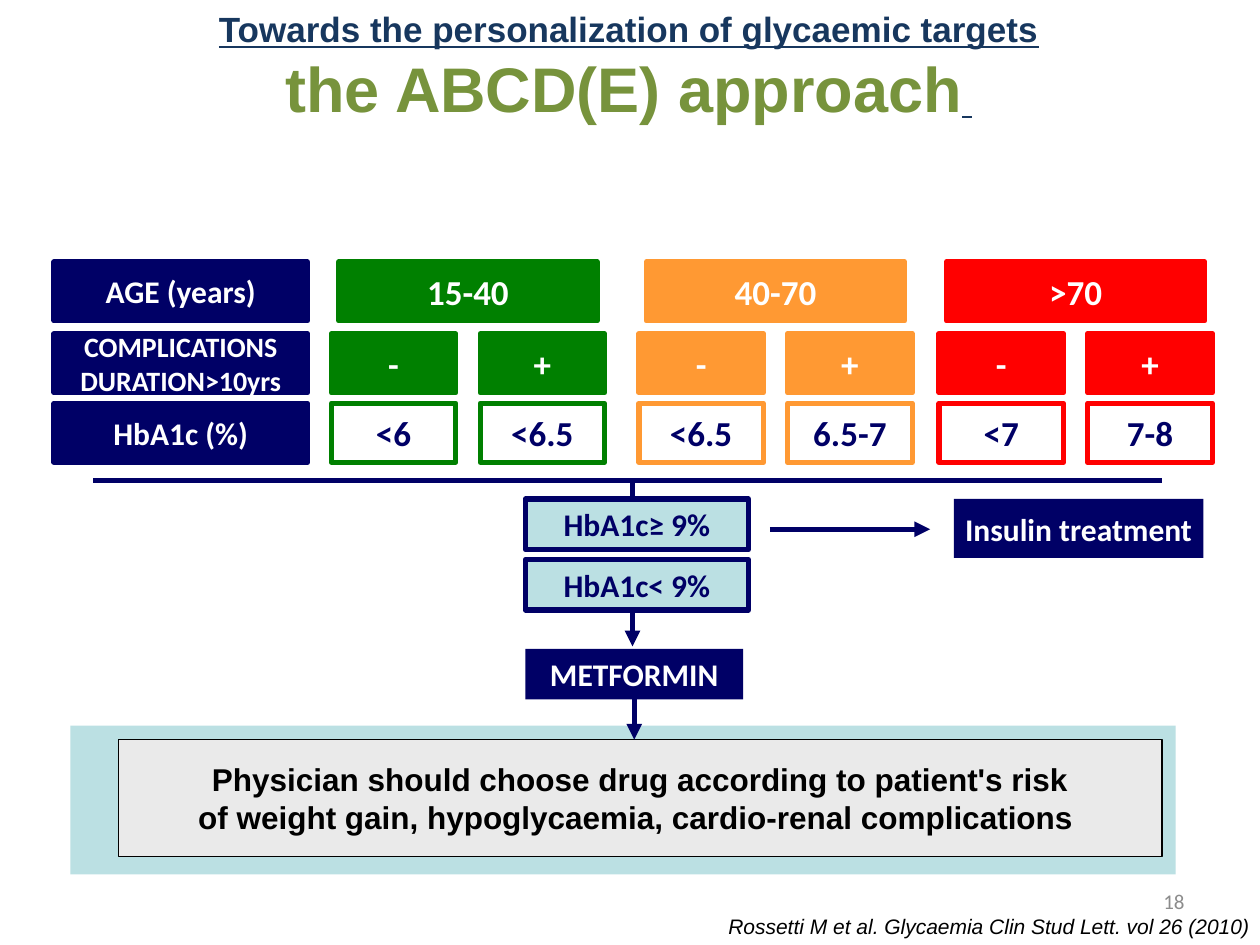
from lxml import etree
from pptx import Presentation
from pptx import util as u
from pptx.dml import color
from pptx.enum import shapes, text
from pptx.oxml import ns

NAVY, PALE, WHITE, BLACK = "000066", "BBE0E3", "FFFFFF", "000000"
CENTER, RIGHT = text.PP_ALIGN.CENTER, text.PP_ALIGN.RIGHT
TOP, MIDDLE = text.MSO_ANCHOR.TOP, text.MSO_ANCHOR.MIDDLE
ROW_TOPS, ROW_HEIGHT = (0, 1.45, 2.85), 1.19
AGE_GROUPS = [
    (5.74, "008000", "15-40", (("-", "<6"), ("+", "<6.5"))),
    (11.94, "FF9933", "40-70", (("-", "<6.5"), ("+", "6.5-7"))),
    (17.99, "FF0000", ">70", (("-", "<7"), ("+", "7-8"))),
]


def rgb(value):
    """Turn a hex string into a colour."""
    return color.RGBColor.from_string(value)


def style_run(run, ink, **font):
    """Apply font values and a colour to a run."""
    for key, value in font.items():
        setattr(run.font, key, value)
    run.font.color.rgb = rgb(ink)


def write(frame, lines, ink, size, align=CENTER, anchor=MIDDLE, wrap=False, **font):
    """Write equally formatted lines into a text frame."""
    frame.word_wrap, frame.vertical_anchor = wrap, anchor
    for index, line in enumerate(lines):
        paragraph = frame.paragraphs[0] if index == 0 else frame.add_paragraph()
        paragraph.alignment = align
        run = paragraph.add_run()
        run.text = line
        style_run(run, ink, size=u.Pt(size), **font)


def add_box(slide, box, fill, edge=None, width=3, lines=(), ink=WHITE, size=18,
            name="Calibri", **layout):
    """Add a filled rectangle with bold text."""
    rect = slide.shapes.add_shape(shapes.MSO_SHAPE.RECTANGLE, *map(u.Cm, box))
    rect.shadow.inherit = False
    rect.fill.solid()
    rect.fill.fore_color.rgb = rgb(fill)
    if edge:
        rect.line.color.rgb = rgb(edge)
        rect.line.width = u.Pt(width)
    else:
        rect.line.fill.background()
    write(rect.text_frame, lines, ink, size, name=name, bold=True, **layout)
    return rect


def add_line(slide, start, end, arrow=False):
    """Add a navy straight connector, with an optional arrowhead."""
    line = slide.shapes.add_connector(
        shapes.MSO_CONNECTOR.STRAIGHT, *map(u.Cm, (*start, *end)))
    line.line.color.rgb = rgb(NAVY)
    line.line.width = u.Pt(3)
    if arrow:
        etree.SubElement(line.line._get_or_add_ln(), ns.qn("a:tailEnd"), type="triangle")
    etree.SubElement(line._element.spPr, ns.qn("a:effectLst"))
    return line


def add_title(slide, box):
    """Format the title placeholder with its two lines."""
    title = slide.shapes.title
    title.left, title.top, title.width, title.height = map(u.Cm, box)
    frame = title.text_frame
    frame.auto_size = text.MSO_AUTO_SIZE.NONE
    common = {"name": "Arial", "bold": True}
    write(frame, ["Towards the personalization of glycaemic targets",
                  "the ABCD(E) approach"], "17375E", 20, anchor=TOP,
          underline=True, **common)
    approach = frame.paragraphs[1]
    style_run(approach.runs[0], "77933C", size=u.Pt(36), underline=False)
    tail = approach.add_run()
    tail.text = " "
    style_run(tail, "17375E", size=u.Pt(20), underline=True, **common)


def add_targets(slide, left, top):
    """Draw the grid of HbA1c targets by age and complications."""
    labels = ((["AGE (years)"], 18),
              (["COMPLICATIONS", "DURATION>10yrs"], 16),
              (["HbA1c (%)"], 18))
    age_y, risk_y, target_y = (top + offset for offset in ROW_TOPS)
    for y, (lines, size) in zip((age_y, risk_y, target_y), labels):
        add_box(slide, (left, y, 5.11, ROW_HEIGHT), NAVY, NAVY, lines=lines, size=size)
    for offset, hue, age, cases in AGE_GROUPS:
        x = left + offset
        add_box(slide, (x, age_y, 5.21, ROW_HEIGHT), hue, hue, lines=[age], size=20)
        for column, (risk, target) in enumerate(cases):
            cell_x = x - 0.15 + column * 3
            add_box(slide, (cell_x, risk_y, 2.51, ROW_HEIGHT), hue, hue,
                    lines=[risk], size=20)
            add_box(slide, (cell_x, target_y, 2.51, ROW_HEIGHT), WHITE, hue,
                    lines=[target], ink=NAVY, size=20)


def add_treatment(slide, left, top):
    """Draw the decision flow from HbA1c thresholds to drug choice."""
    axis = left + 10.87
    box_x = left + 8.71
    add_box(slide, (left - 0.46, top + 4.95, 22.28, 3), PALE)
    add_line(slide, (left, top), (left + 21.54, top))
    add_line(slide, (axis, top), (axis, top + 0.38))
    for offset, threshold in ((0.38, "HbA1c≥ 9%"), (1.6, "HbA1c< 9%")):
        add_box(slide, (box_x, top + offset, 4.5, 1.02), PALE, NAVY,
                lines=[threshold], ink=NAVY)
    add_line(slide, (left + 13.64, top + 0.99), (left + 16.87, top + 0.99), arrow=True)
    add_box(slide, (left + 17.35, top + 0.38, 5.03, ROW_HEIGHT), NAVY,
            lines=["Insulin treatment"])
    add_line(slide, (axis, top + 2.59), (axis, top + 3.35), arrow=True)
    metformin = add_box(slide, (box_x, top + 3.4, 4.39, 1.02), NAVY,
                        lines=["METFORMIN"], anchor=TOP, wrap=True)
    add_box(slide, (left + 0.51, top + 5.23, 21.03, 2.36), "EAEAEA", BLACK, 1,
            ["Physician should choose drug according to patient's risk",
             "of weight gain, hypoglycaemia, cardio-renal complications "],
            ink=BLACK, name="Arial", wrap=True)
    choice = add_line(slide, (box_x + 2.195, top + 4.42),
                      (box_x + 2.195, top + 5.23), arrow=True)
    choice.begin_connect(metformin, 2)


def add_footer(slide, left, top):
    """Place the page number and the citation."""
    page = slide.shapes.add_textbox(*map(u.Cm, (left + 5.54, top, 5.92, 1.02)))
    write(page.text_frame, ["18"], "8C8C8C", 12, RIGHT, wrap=True, name="Calibri")
    citation = slide.shapes.add_textbox(*map(u.Cm, (left, top + 0.64, 12.78, 0.76)))
    write(citation.text_frame,
          ["Rossetti M et al. Glycaemia Clin Stud Lett. vol 26 (2010)"],
          BLACK, 12, RIGHT, TOP, True, name="Arial", italic=True)


def main():
    """Build and save the slide."""
    deck = Presentation()
    deck.slide_width, deck.slide_height = u.Cm(25.4), u.Cm(19.05)
    slide = deck.slides.add_slide(deck.slide_layouts[5])
    add_title(slide, (4.09, 0.03, 17.17, 2.64))
    add_targets(slide, 1.09, 5.28)
    add_treatment(slide, 1.88, 9.68)
    add_footer(slide, 12.67, 17.65)
    deck.save("out.pptx")


if __name__ == "__main__":
    main()
